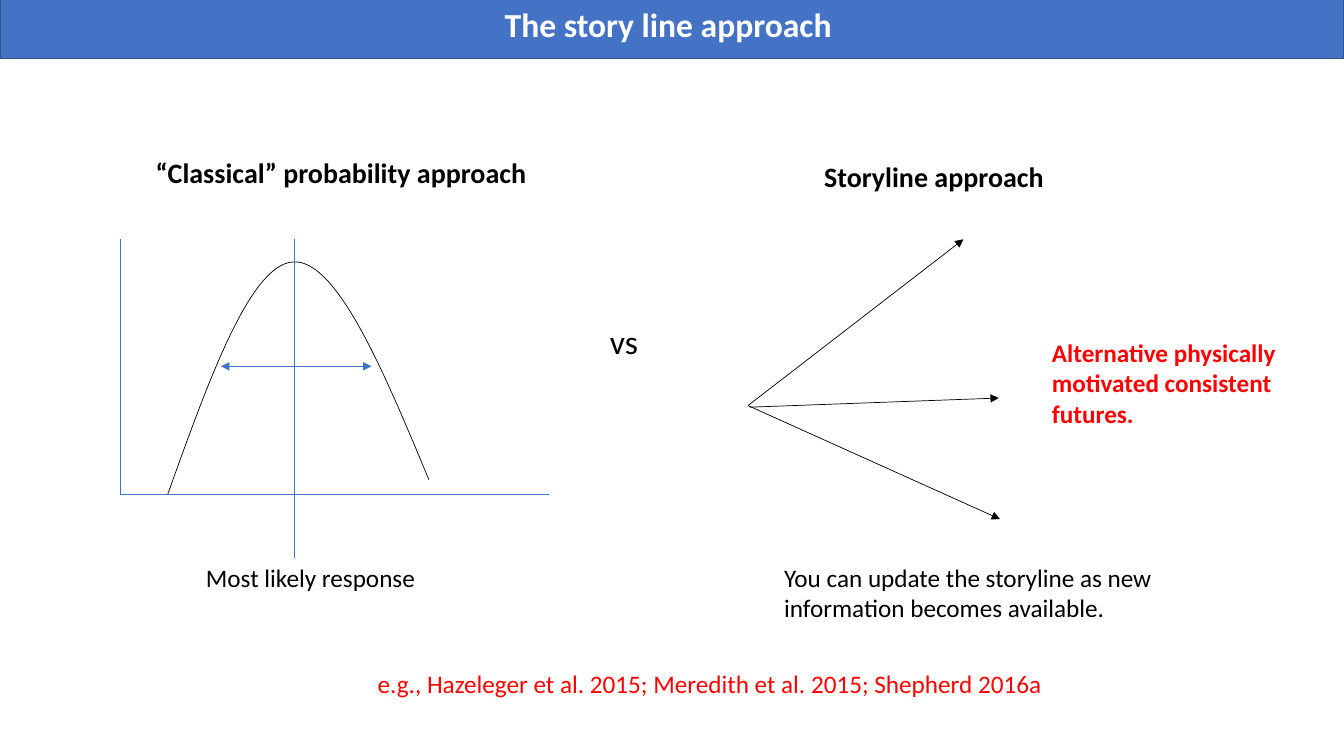
from lxml import etree
from pptx import Presentation
from pptx import util as u
from pptx.dml.color import RGBColor
from pptx.enum import shapes, text
from pptx.oxml.ns import qn

BLUE = RGBColor(0x44, 0x72, 0xC4)
DARK_BLUE = RGBColor(0x32, 0x54, 0x91)
BLACK = RGBColor(0, 0, 0)
RED = RGBColor(255, 0, 0)
WHITE = RGBColor(255, 255, 255)
FONT = "Calibri"


def format_text(tf, content, size, color, bold=False):
    tf.text = content
    for r in tf.paragraphs[0].runs:
        r.font.name, r.font.size = FONT, u.Pt(size)
        r.font.bold, r.font.color.rgb = bold, color


def add_text(s, box, content, size=18, color=BLACK, bold=False):
    sp = s.shapes.add_textbox(*map(u.Cm, box))
    tf = sp.text_frame
    tf.word_wrap = True
    format_text(tf, content, size, color, bold)


def add_line(s, start, end, color, arrows=()):
    """Draw a thin line; arrows names its arrow ends, headEnd before tailEnd."""
    cx = s.shapes.add_connector(shapes.MSO_CONNECTOR.STRAIGHT,
                                *map(u.Cm, (*start, *end)))
    cx.line.color.rgb, cx.line.width = color, u.Pt(0.5)
    for arrow in arrows:
        etree.SubElement(cx.line._get_or_add_ln(), qn("a:" + arrow), type="triangle")
    etree.SubElement(cx._element.spPr, qn("a:effectLst"))


def bezier(p0, p1, p2, p3, steps=30):
    """Return points along a cubic curve."""
    points = []
    for i in range(steps + 1):
        t = i / steps
        weights = ((1 - t) ** 3, 3 * t * (1 - t) ** 2, 3 * t * t * (1 - t), t ** 3)
        points.append(tuple(sum(w * v for w, v in zip(weights, axis))
                            for axis in zip(p0, p1, p2, p3)))
    return points


def add_curve(s, points):
    first, *rest = [(u.Cm(x), u.Cm(y)) for x, y in points]
    fb = s.shapes.build_freeform(*first)
    fb.add_line_segments(rest, close=False)
    sp = fb.convert_to_shape()
    sp.shadow.inherit = False
    sp.fill.background()
    sp.line.color.rgb, sp.line.width = BLACK, u.Pt(0.5)


def title_bar(s, left, top, width, height):
    sp = s.shapes.title
    sp.left, sp.top, sp.width, sp.height = map(u.Cm, (left, top, width, height))
    sp.fill.solid()
    sp.fill.fore_color.rgb = BLUE
    sp.line.color.rgb, sp.line.width = DARK_BLUE, u.Pt(1)
    tf = sp.text_frame
    format_text(tf, "The story line approach ", 24, WHITE, True)
    tf.auto_size = text.MSO_AUTO_SIZE.NONE
    tf.vertical_anchor = text.MSO_ANCHOR.MIDDLE
    tf.paragraphs[0].alignment = text.PP_ALIGN.CENTER


def probability_panel(s, left, top, width, height):
    def at(x, y):
        return left + x, top + y

    axis_top, base, peak, spread = 2.25, 8.67, 4.4, 5.45
    add_text(s, (*at(0.64, 0.02), 10.41, 1.12),
             "“Classical” probability approach", 20, bold=True)
    rise = bezier(at(1.2, base), at(2.24, 5.77), at(3.28, 2.87), at(4.37, 2.82))
    fall = bezier(at(4.37, 2.82), at(5.46, 2.77), at(6.63, 5.54), at(7.78, 8.31))
    add_curve(s, rise + fall[1:])
    add_line(s, at(0, axis_top), at(0, base), BLUE)
    add_line(s, at(0, base), at(width, base), BLUE)
    add_line(s, at(peak, axis_top), at(peak, height - 1.02), BLUE)
    add_line(s, at(2.54, spread), at(6.33, spread), BLUE, ("headEnd", "tailEnd"))
    add_text(s, (*at(1.91, height - 1.02), 6.99, 1.02), "Most likely response")


def storyline_panel(s, left, top, width, height):
    def at(x, y):
        return left + x, top + y

    add_text(s, (*at(1.67, 0.11), 9.12, 1.12), "Storyline approach", 20, bold=True)
    for start, tip in (((0, 6.44), (5.43, 2.25)),
                       ((0.05, 6.48), (6.32, 6.25)),
                       ((0, 6.44), (6.35, 9.3))):
        add_line(s, at(*start), at(*tip), BLACK, ("tailEnd",))
    add_text(s, (*at(width - 6.78, 4.6), 6.78, 2.57),
             "Alternative physically motivated consistent futures.",
             color=RED, bold=True)
    add_text(s, (*at(0.66, height - 1.8), 11.58, 1.8),
             "You can update the storyline as new information becomes available.")


def main():
    prs = Presentation()
    prs.slide_width, prs.slide_height = u.Cm(33.87), u.Cm(19.05)
    s = prs.slides.add_slide(prs.slide_layouts[5])
    title_bar(s, 0, -0.28, 33.87, 1.75)
    probability_panel(s, 3.03, 3.78, 10.8, 11.29)
    add_text(s, (15.12, 7.96, 2.87, 1.27), "vs", 24)
    storyline_panel(s, 18.85, 3.78, 14.19, 12.07)
    add_text(s, (9.27, 16.71, 18.95, 1.02),
             "e.g., Hazeleger et al. 2015; Meredith et al. 2015; Shepherd 2016a",
             color=RED)
    prs.save("out.pptx")


if __name__ == "__main__":
    main()
